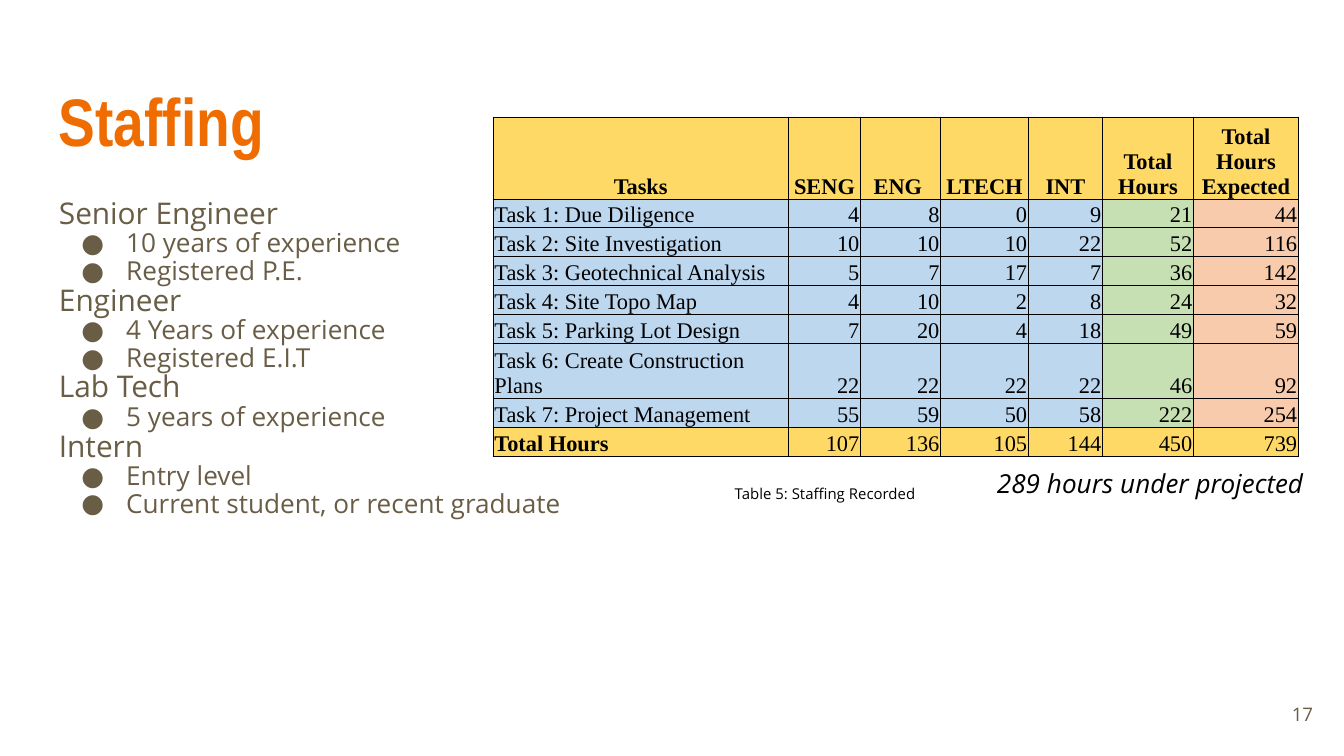
from dataclasses import dataclass

from lxml import etree
from pptx import Presentation, util as u
from pptx.dml.color import RGBColor
from pptx.enum import text
from pptx.oxml import ns

Pt = u.Pt
AL, ANC = text.PP_ALIGN, text.MSO_ANCHOR


@dataclass(frozen=True)
class Theme:
    orange: str = "EF6C00"
    brown: str = "695D46"
    black: str = "000000"
    yellow: str = "FFD966"
    blue: str = "BDD7EE"
    green: str = "C6E0B4"
    peach: str = "F8CBAD"
    title: int = 36
    role: int = 16
    item: int = 14
    cell: int = 12
    number: int = 10
    caption: int = 8
    head_font: str = "Arial Narrow"
    body_font: str = "Open Sans"
    table_font: str = "Times New Roman"


T = Theme()


def write(p, words, color, **font):
    """Add one formatted run to a paragraph."""
    r = p.add_run()
    r.text = words
    r.font.color.rgb = RGBColor.from_string(color)
    for name, value in font.items():
        setattr(r.font, name, value)


def add_box(left, top, width, height, inset=7.2, **frame):
    """Add a wrapping text box and return its text frame."""
    sp = s.shapes.add_textbox(Pt(left), Pt(top), Pt(width), Pt(height))
    tf = sp.text_frame
    margins = dict(margin_left=Pt(7.2), margin_right=Pt(7.2),
                   margin_top=Pt(inset), margin_bottom=Pt(inset))
    for name, value in {"word_wrap": True, **margins, **frame}.items():
        setattr(tf, name, value)
    return tf


prs = Presentation()
prs.slide_width, prs.slide_height = Pt(720), Pt(405)
s = prs.slides.add_slide(prs.slide_layouts[6])

# Title
tf = add_box(24.5, 35.5, 671, 55.5)
write(tf.paragraphs[0], "Staffing", T.orange,
      size=Pt(T.title), name=T.head_font, bold=True)

# Staff roles with their qualifications
roles = {
    "Senior Engineer": ["10 years of experience", "Registered P.E."],
    "Engineer": ["4 Years of experience", "Registered E.I.T"],
    "Lab Tech": ["5 years of experience"],
    "Intern": ["Entry level", "Current student, or recent graduate"],
}
tf = add_box(24.5, 99.5, 314.5, 260)
p = tf.paragraphs[0]
for role, items in roles.items():
    if p.runs:
        p = tf.add_paragraph()
    p.line_spacing = 0.88
    write(p, role, T.brown, size=Pt(T.role), name=T.body_font)
    for item in items:
        p = tf.add_paragraph()
        p.line_spacing = 0.88
        pPr = p._p.get_or_add_pPr()
        pPr.set("marL", str(Pt(36)))
        pPr.set("indent", str(Pt(-24)))
        clr = etree.SubElement(pPr, ns.qn("a:buClr"))
        etree.SubElement(clr, ns.qn("a:srgbClr"), val=T.brown)
        etree.SubElement(pPr, ns.qn("a:buFont"), typeface=T.body_font)
        etree.SubElement(pPr, ns.qn("a:buChar"), char="●")
        write(p, item, T.brown, size=Pt(T.item), name=T.body_font)

# Table caption
tf = add_box(386.5, 255, 281, 18.5)
write(tf.paragraphs[0], "Table 5: Staffing Recorded", T.black,
      size=Pt(T.caption), name=T.body_font)

# Slide number
tf = add_box(667.5, 367, 43, 31, vertical_anchor=ANC.MIDDLE)
tf.paragraphs[0].alignment = AL.RIGHT
write(tf.paragraphs[0], "17", T.brown, size=Pt(T.number), name=T.body_font)

# Hours table
rows = [
    ["Tasks", "SENG", "ENG ", "LTECH", "INT", "Total Hours",
     "Total Hours Expected"],
    ["Task 1: Due Diligence", 4, 8, 0, 9, 21, 44],
    ["Task 2: Site Investigation", 10, 10, 10, 22, 52, 116],
    ["Task 3: Geotechnical Analysis", 5, 7, 17, 7, 36, 142],
    ["Task 4: Site Topo Map", 4, 10, 2, 8, 24, 32],
    ["Task 5: Parking Lot Design", 7, 20, 4, 18, 49, 59],
    ["Task 6: Create Construction Plans", 22, 22, 22, 22, 46, 92],
    ["Task 7: Project Management", 55, 59, 50, 58, 222, 254],
    ["Total Hours", 107, 136, 105, 144, 450, 739],
]
widths = [158.2, 38.7, 42.9, 47, 39.7, 48.8, 56.2]
heights = [33] + [15.5] * 8
column_fills = [T.blue] * 5 + [T.green, T.peach]
last = len(rows) - 1

frame = s.shapes.add_table(len(rows), len(widths), Pt(264.2), Pt(62.7),
                           Pt(sum(widths)), Pt(sum(heights)))
table = frame.table
table.first_row = table.horz_banding = False
for column, width in zip(table.columns, widths):
    column.width = Pt(width)
for row, height in zip(table.rows, heights):
    row.height = Pt(height)

cell_format = dict(vertical_anchor=ANC.BOTTOM, margin_left=Pt(0.7),
                   margin_right=Pt(0.7), margin_top=Pt(0.7), margin_bottom=0)
for i, values in enumerate(rows):
    for j, value in enumerate(values):
        cell = table.cell(i, j)
        for name, setting in cell_format.items():
            setattr(cell, name, setting)
        fill = T.yellow if i in (0, last) else column_fills[j]
        cell.fill.solid()
        cell.fill.fore_color.rgb = RGBColor.from_string(fill)

        p = cell.text_frame.paragraphs[0]
        p.alignment = AL.CENTER if i == 0 else AL.RIGHT if j else AL.LEFT
        write(p, str(value), T.black, size=Pt(T.cell), name=T.table_font,
              bold=i == 0 or (i == last and j == 0))

        # Borders come before the fill in the cell properties
        tcPr = cell._tc.get_or_add_tcPr()
        for k, side in enumerate(("lnL", "lnR", "lnT", "lnB")):
            ln = etree.Element(ns.qn("a:" + side), w=str(Pt(0.5)))
            line_fill = etree.SubElement(ln, ns.qn("a:solidFill"))
            etree.SubElement(line_fill, ns.qn("a:srgbClr"), val=T.black)
            tcPr.insert(k, ln)

# Remark on the result
tf = add_box(527, 247, 187, 24.5, inset=3.6)
write(tf.paragraphs[0], "289 hours under projected", T.black,
      size=Pt(T.item), name=T.body_font, italic=True)

prs.save("out.pptx")
